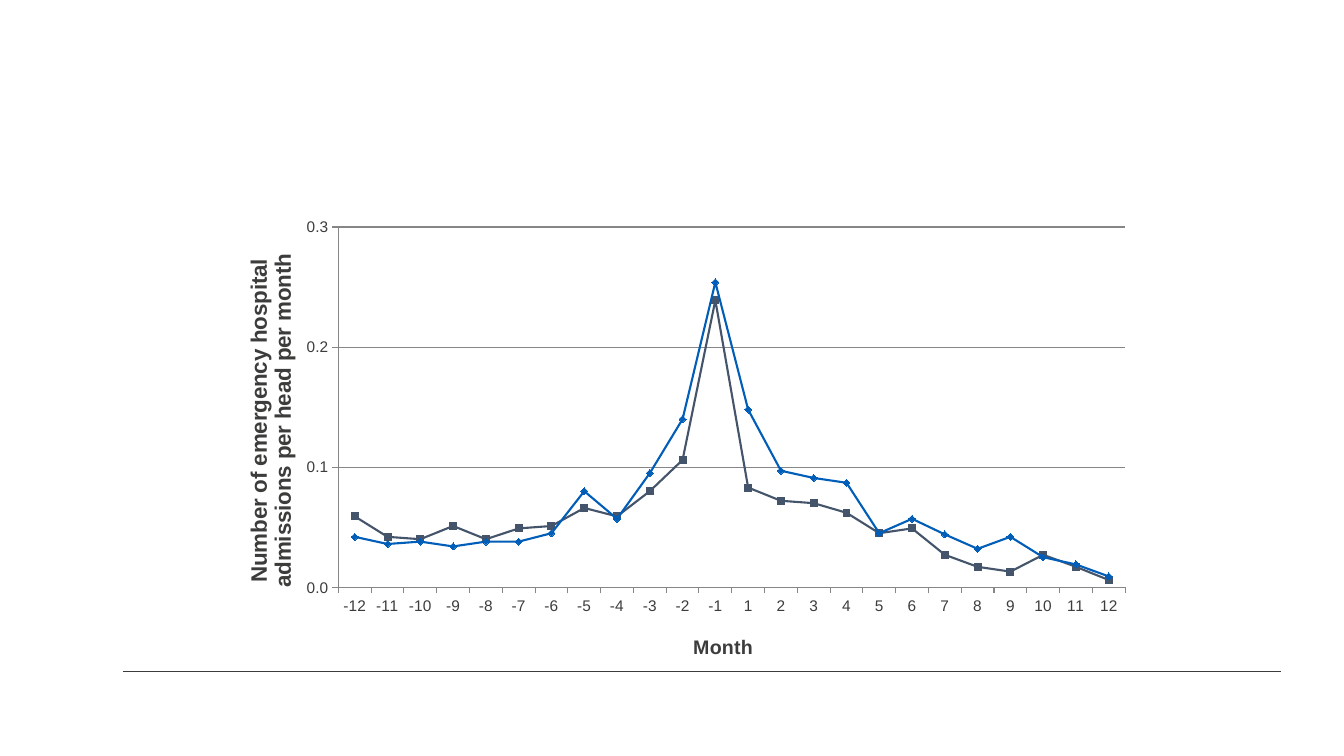
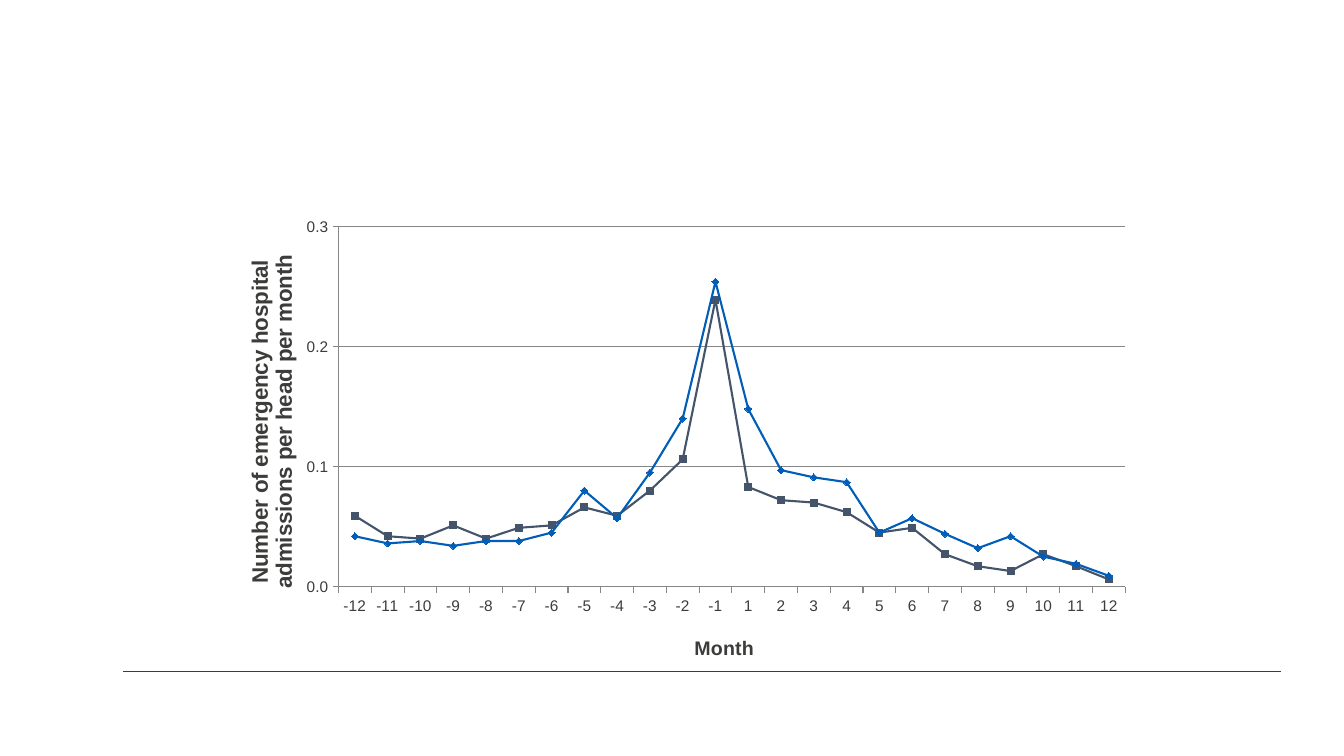
from dataclasses import dataclass
from typing import Any

from lxml.etree import SubElement
from pptx import Presentation
from pptx.chart.axis import CategoryAxis, ValueAxis
from pptx.chart.chart import Chart
from pptx.chart.data import CategoryChartData
from pptx.chart.series import LineSeries
from pptx.dml.color import RGBColor
from pptx.enum.chart import XL_CHART_TYPE, XL_MARKER_STYLE, XL_TICK_LABEL_POSITION, XL_TICK_MARK
from pptx.enum.shapes import MSO_CONNECTOR
from pptx.oxml import parse_xml
from pptx.oxml.ns import nsdecls, qn
from pptx.slide import Slide
from pptx.util import Emu, Pt

PX = 9144
PAGE_SIZE = (1333, 750)
CHART_SIZE = (929, 518)
PLOT_SIZE = (0.84, 0.69)


@dataclass(frozen=True)
class Theme:
    font: str = "Arial"
    text: RGBColor = RGBColor(0x3C, 0x3C, 0x3B)
    axis: RGBColor = RGBColor(0x86, 0x86, 0x86)
    slate: RGBColor = RGBColor(0x44, 0x54, 0x6A)
    blue: RGBColor = RGBColor(0x00, 0x5E, 0xB8)
    white: RGBColor = RGBColor(0xFF, 0xFF, 0xFF)
    base_size: int = 10
    tick_size: int = 11
    month_size: int = 14
    admissions_size: int = 16
    rule_width: float = 0.5
    axis_width: float = 0.75
    series_width: float = 1.5
    marker_size: int = 5


THEME = Theme()


@dataclass(frozen=True)
class SeriesStyle:
    name: str
    values: tuple[float, ...]
    color: RGBColor
    marker: XL_MARKER_STYLE


@dataclass(frozen=True)
class AxisTitle:
    text: str
    size: int
    left: float
    top: float
    rotation: int


@dataclass(frozen=True)
class ChartPage:
    left: int
    top: int
    plot_left: float
    plot_top: float
    hollow_from: int | None


MONTHS = [str(month) for month in range(-12, 13) if month]
SERIES = (
    SeriesStyle(
        "Series 1",
        (0.059, 0.042, 0.04, 0.051, 0.04, 0.049, 0.051, 0.066, 0.059, 0.08, 0.106, 0.239,
         0.083, 0.072, 0.07, 0.062, 0.045, 0.049, 0.027, 0.017, 0.013, 0.027, 0.017, 0.006),
        THEME.slate,
        XL_MARKER_STYLE.SQUARE,
    ),
    SeriesStyle(
        "Series 2",
        (0.042, 0.036, 0.038, 0.034, 0.038, 0.038, 0.045, 0.08, 0.057, 0.095, 0.14, 0.254,
         0.148, 0.097, 0.091, 0.087, 0.045, 0.057, 0.044, 0.032, 0.042, 0.025, 0.019, 0.009),
        THEME.blue,
        XL_MARKER_STYLE.DIAMOND,
    ),
)
MONTH_TITLE = AxisTitle("Month", THEME.month_size, 0.52, 0.9, 0)
ADMISSIONS_TITLE = AxisTitle(
    "Number of emergency hospital admissions per head per month",
    THEME.admissions_size, 0.04, 0.17, -5400000,
)
PAGES = (
    ChartPage(201, 160, 0.145, 0.126, MONTHS.index("3")),
    ChartPage(202, 161, 0.144, 0.123, None),
)


def px(length: int) -> Emu:
    return Emu(length * PX)


def apply(target: Any, formats: dict[str, Any]) -> None:
    for name, value in formats.items():
        setattr(target, name, value)


def style_line(line: Any, color: RGBColor, width: float) -> None:
    line.color.rgb = color
    line.width = Pt(width)


def style_font(font: Any, size: int, bold: bool = False) -> None:
    apply(font, {"name": THEME.font, "size": Pt(size), "bold": bold})
    font.color.rgb = THEME.text


def make_layout(values: dict[str, Any]) -> Any:
    layout = parse_xml(f"<c:layout {nsdecls('c')}><c:manualLayout/></c:layout>")
    for name, value in values.items():
        SubElement(layout[0], qn(f"c:{name}")).set("val", str(value))
    return layout


def place_plot(chart: Chart, page: ChartPage) -> None:
    plot_area = chart._chartSpace.chart.plotArea
    for old in plot_area.findall(qn("c:layout")):
        plot_area.remove(old)
    width, height = PLOT_SIZE
    plot_area.insert(0, make_layout({
        "layoutTarget": "inner", "xMode": "edge", "yMode": "edge",
        "x": page.plot_left, "y": page.plot_top, "w": width, "h": height,
    }))


def style_axis(axis: CategoryAxis | ValueAxis, title: AxisTitle) -> None:
    apply(axis, {
        "major_tick_mark": XL_TICK_MARK.OUTSIDE,
        "minor_tick_mark": XL_TICK_MARK.NONE,
        "tick_label_position": XL_TICK_LABEL_POSITION.LOW,
    })
    style_line(axis.format.line, THEME.axis, THEME.axis_width)
    frame = axis.axis_title.text_frame
    para = frame.paragraphs[0]
    span = para.add_run()
    span.text = title.text
    style_font(span.font, title.size, True)
    body = frame._txBody.find(qn("a:bodyPr"))
    body.set("rot", str(title.rotation))
    body.set("vert", "horz")
    element = axis.axis_title._element
    for old in element.findall(qn("c:layout")):
        element.remove(old)
    element.find(qn("c:tx")).addnext(make_layout({
        "xMode": "edge", "yMode": "edge", "x": title.left, "y": title.top,
    }))


def style_marker(marker: Any, shape: XL_MARKER_STYLE, color: RGBColor) -> None:
    apply(marker, {"style": shape, "size": THEME.marker_size})
    marker.format.fill.solid()
    marker.format.fill.fore_color.rgb = color
    style_line(marker.format.line, color, THEME.axis_width)


def style_series(series: LineSeries, style: SeriesStyle) -> None:
    series.smooth = False
    style_line(series.format.line, style.color, THEME.series_width)
    style_marker(series.marker, style.marker, style.color)


def draw_chart(slide: Slide, page: ChartPage) -> None:
    data = CategoryChartData(number_format="0.000")
    data.categories = MONTHS
    for style in SERIES:
        data.add_series(style.name, style.values)
    chart = slide.shapes.add_chart(
        XL_CHART_TYPE.LINE_MARKERS, px(page.left), px(page.top), *map(px, CHART_SIZE), data
    ).chart
    apply(chart, {"has_legend": False, "has_title": False})
    style_font(chart.font, THEME.base_size)
    chart.plots[0].vary_by_categories = False
    place_plot(chart, page)
    style_axis(chart.category_axis, MONTH_TITLE)
    style_axis(chart.value_axis, ADMISSIONS_TITLE)
    for axis in (chart.category_axis, chart.value_axis):
        style_font(axis.tick_labels.font, THEME.tick_size)
    apply(chart.value_axis, {
        "minimum_scale": 0, "maximum_scale": 0.3, "major_unit": 0.1, "has_major_gridlines": True,
    })
    apply(chart.value_axis.tick_labels, {
        "number_format": "#,##0.0", "number_format_is_linked": False,
    })
    style_line(chart.value_axis.major_gridlines.format.line, THEME.axis, THEME.axis_width)
    for series, style in zip(chart.plots[0].series, SERIES):
        style_series(series, style)
    if page.hollow_from is not None:
        first = chart.plots[0].series[0]
        for index in range(page.hollow_from, len(MONTHS)):
            point = first.points[index]
            style_marker(point.marker, SERIES[0].marker, THEME.white)
            style_line(point.format.line, SERIES[0].color, THEME.series_width)


def draw_footer_rule(slide: Slide) -> None:
    rule = slide.shapes.add_connector(
        MSO_CONNECTOR.STRAIGHT, px(122), px(666), px(1271), px(666)
    )
    style_line(rule.line, THEME.text, THEME.rule_width)
    SubElement(rule._element.spPr, qn("a:effectLst"))


def main() -> None:
    deck = Presentation()
    width, height = map(px, PAGE_SIZE)
    apply(deck, {"slide_width": width, "slide_height": height})
    for page in PAGES:
        slide = deck.slides.add_slide(deck.slide_layouts[6])
        draw_footer_rule(slide)
        draw_chart(slide, page)
    deck.save("out.pptx")


if __name__ == "__main__":
    main()
